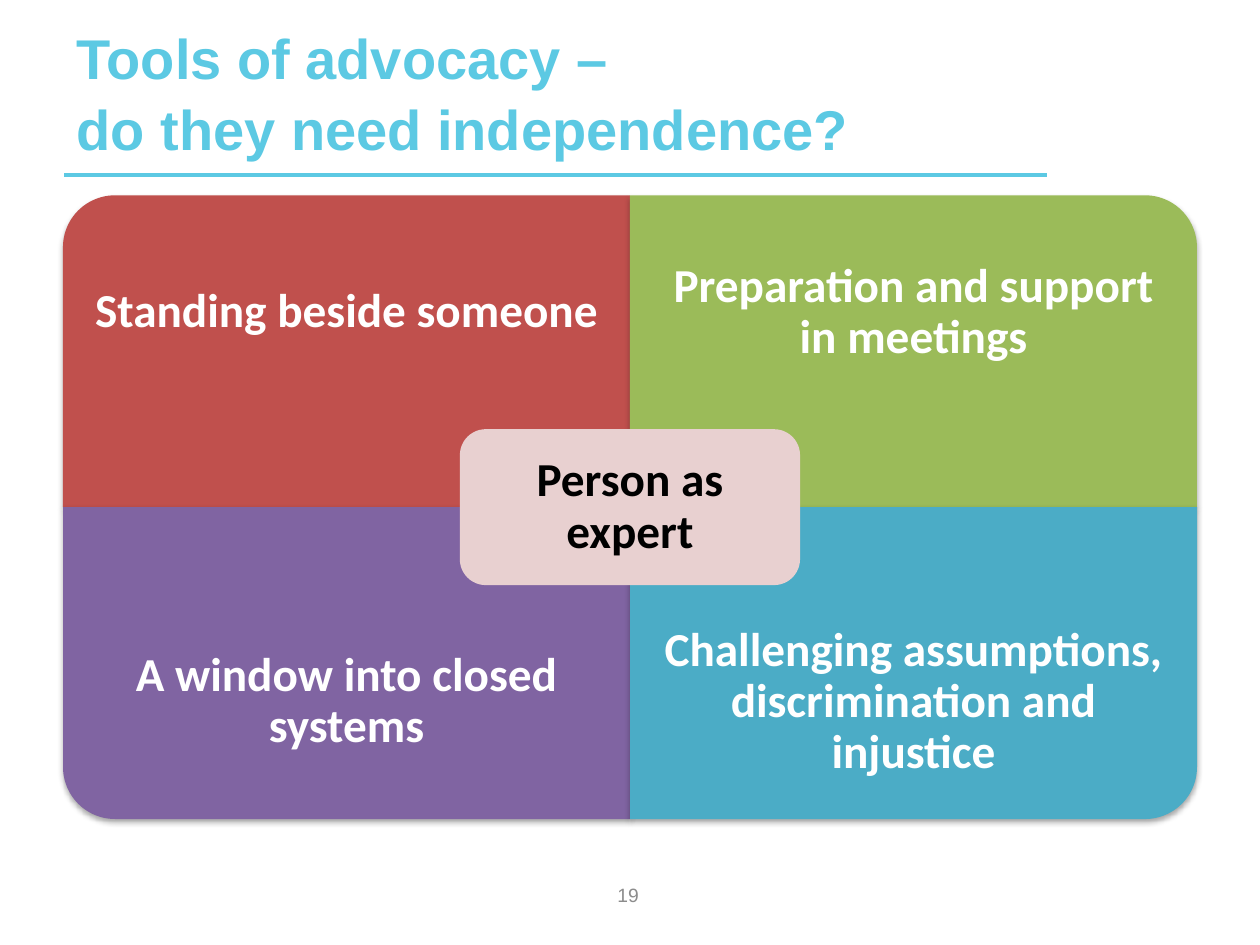
from dataclasses import dataclass

import pptx
import pptx.dml.color
import pptx.enum.shapes
import pptx.enum.text
import pptx.oxml
import pptx.oxml.ns
import pptx.util

ANCHOR = pptx.enum.text.MSO_ANCHOR
ALIGN = pptx.enum.text.PP_ALIGN
SHAPE = pptx.enum.shapes.MSO_SHAPE
NAMESPACE = pptx.oxml.ns.nsdecls("a")

SLIDE_WIDTH, SLIDE_HEIGHT = 10, 7.5
ACCENT = "5CC9E3"

# The diagram is a grid of two columns and eight rows.
GRID_LEFT, GRID_TOP = 0.05 * SLIDE_WIDTH, 1.55
COLUMN = 0.45 * SLIDE_WIDTH
ROW = 0.66 * SLIDE_HEIGHT / 8


@dataclass
class Box:
    left: float
    top: float
    width: float
    height: float

    def lengths(self) -> list:
        return [pptx.util.Inches(value)
                for value in (self.left, self.top, self.width, self.height)]


@dataclass
class TextStyle:
    size: float
    font: str
    color: str
    bold: bool = True
    align: ALIGN = ALIGN.CENTER
    anchor: ANCHOR = ANCHOR.MIDDLE
    line_spacing: float = 0.9
    inset: float = 0.21


@dataclass
class Quadrant:
    text: str
    color: str
    column: int
    row: int
    text_row: int
    rotation: int


QUADRANTS = [
    Quadrant("Standing beside someone", "C0504D", 0, 0, 0, 270),
    Quadrant("Preparation and support in meetings", "9BBB59", 1, 0, 0, 0),
    Quadrant("A window into closed systems", "8064A2", 0, 4, 5, 180),
    Quadrant("Challenging assumptions, discrimination and injustice",
             "4BACC6", 1, 4, 5, 90),
]


def rgb(color: str) -> pptx.dml.color.RGBColor:
    return pptx.dml.color.RGBColor.from_string(color)


def grid_box(column: float, row: float, columns: float, rows: float) -> Box:
    return Box(GRID_LEFT + column * COLUMN, GRID_TOP + row * ROW,
               columns * COLUMN, rows * ROW)


def write_text(shape, lines: list[str], style: TextStyle) -> None:
    frame = shape.text_frame
    frame.word_wrap = True
    frame.vertical_anchor = style.anchor
    frame.margin_left = frame.margin_right = pptx.util.Inches(style.inset)
    frame.margin_top = frame.margin_bottom = pptx.util.Inches(
        min(style.inset, 0.21))
    paragraph = frame.paragraphs[0]
    paragraph.alignment = style.align
    paragraph.line_spacing = style.line_spacing
    for index, line in enumerate(lines):
        if index:
            paragraph.add_line_break()
        run = paragraph.add_run()
        run.text = line
        run.font.size = pptx.util.Pt(style.size)
        run.font.name = style.font
        run.font.bold = style.bold
        run.font.color.rgb = rgb(style.color)


def add_text(slide, box: Box, lines: list[str], style: TextStyle) -> None:
    write_text(slide.shapes.add_textbox(*box.lengths()), lines, style)


def add_filled_shape(slide, kind: SHAPE, box: Box, color: str):
    shape = slide.shapes.add_shape(kind, *box.lengths())
    shape.shadow.inherit = False
    shape.fill.solid()
    shape.fill.fore_color.rgb = rgb(color)
    shape.line.fill.background()
    return shape


def add_shadow(shape) -> None:
    """Cast a soft shadow straight down, whatever the shape's rotation."""
    effects = shape._element.spPr.find(pptx.oxml.ns.qn("a:effectLst"))
    effects.append(pptx.oxml.parse_xml(
        f'<a:outerShdw {NAMESPACE} blurRad="{pptx.util.Pt(3.1)}" '
        f'dist="{pptx.util.Pt(1.8)}" dir="5400000" rotWithShape="0">'
        '<a:srgbClr val="000000"><a:alpha val="35000"/></a:srgbClr>'
        '</a:outerShdw>'))


def add_quadrant(slide, quadrant: Quadrant) -> None:
    box = grid_box(quadrant.column, quadrant.row, 1, 4)
    if quadrant.rotation % 180:
        # A quarter turn swaps the sides around the same centre.
        shift = (box.width - box.height) / 2
        box = Box(box.left + shift, box.top - shift, box.height, box.width)
    shape = add_filled_shape(slide, SHAPE.ROUND_1_RECTANGLE, box,
                             quadrant.color)
    shape.rotation = quadrant.rotation
    add_shadow(shape)
    add_text(slide, grid_box(quadrant.column, quadrant.text_row, 1, 3),
             [quadrant.text], TextStyle(27, "Calibri", "FFFFFF"))


def add_rule(slide, left: float, right: float, top: float) -> None:
    rule = slide.shapes.add_connector(
        pptx.enum.shapes.MSO_CONNECTOR.STRAIGHT,
        *[pptx.util.Inches(value) for value in (left, top, right, top)])
    rule.line.color.rgb = rgb(ACCENT)
    rule.line.width = pptx.util.Pt(2)
    rule._element.spPr.append(
        pptx.oxml.parse_xml(f"<a:effectLst {NAMESPACE}/>"))


def main() -> None:
    presentation = pptx.Presentation()
    presentation.slide_width = pptx.util.Inches(SLIDE_WIDTH)
    presentation.slide_height = pptx.util.Inches(SLIDE_HEIGHT)
    slide = presentation.slides.add_slide(presentation.slide_layouts[6])

    add_rule(slide, 0.51, 8.31, 1.39)
    add_text(slide, Box(0.51, 0.29, 7.8, 1.09),
             ["Tools of advocacy – ", "do they need independence?"],
             TextStyle(32, "Arial", ACCENT, align=ALIGN.LEFT,
                       anchor=ANCHOR.BOTTOM, line_spacing=1.05, inset=0.1))
    add_text(slide, Box(3.82, 6.9, 2.33, 0.4), ["19"],
             TextStyle(11, "Arial", "8C8C8C", bold=False, line_spacing=1,
                       inset=0.1))

    for quadrant in QUADRANTS:
        add_quadrant(slide, quadrant)
    core = add_filled_shape(slide, SHAPE.ROUNDED_RECTANGLE,
                            grid_box(0.7, 3, 0.6, 2), "E8D0D0")
    write_text(core, ["Person as expert"],
               TextStyle(27, "Calibri", "000000", inset=0.17))

    presentation.save("out.pptx")


if __name__ == "__main__":
    main()
